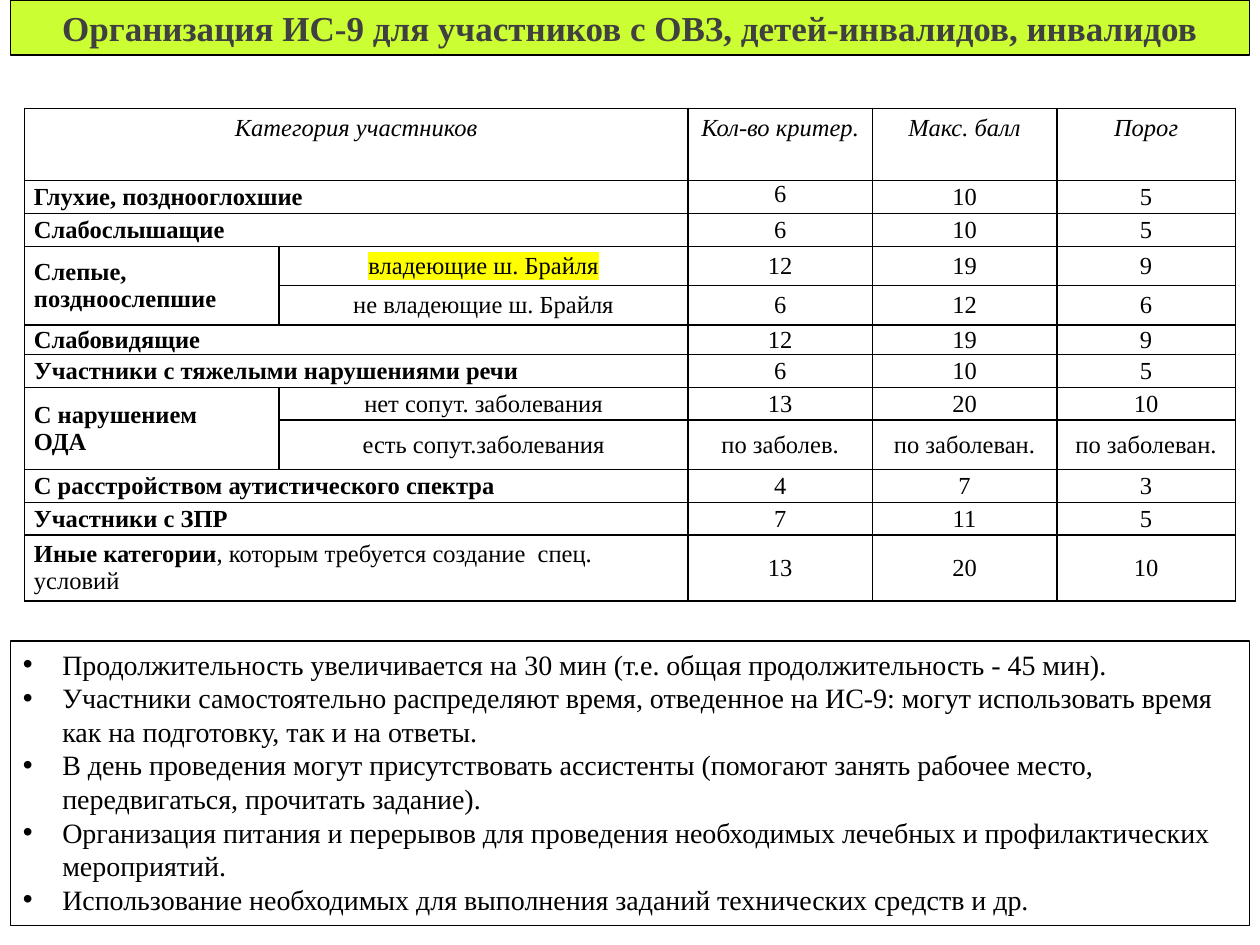
from lxml import etree
from pptx import Presentation
from pptx.dml.color import RGBColor
from pptx.enum import shapes, text
from pptx.oxml import ns
from pptx.util import Pt

FONT = "Times New Roman"
BLACK = RGBColor(0x00, 0x00, 0x00)
WHITE = RGBColor(0xFF, 0xFF, 0xFF)
GRAY = RGBColor(0x40, 0x40, 0x40)
LIME = RGBColor(0xCC, 0xFF, 0x33)
YELLOW = RGBColor(0xFF, 0xFF, 0x00)
CENTER = text.PP_ALIGN.CENTER
LEFT = text.PP_ALIGN.LEFT
MIDDLE = text.MSO_ANCHOR.MIDDLE
TOP = text.MSO_ANCHOR.TOP

# Content
TITLE = "Организация ИС-9 для участников с ОВЗ, детей-инвалидов, инвалидов"
HEADER = ("Категория участников", "", "Кол-во критер.", "Макс. балл", "Порог")
BRAILLE = "владеющие ш. Брайля"
# Category, rest of its wording, subcategory, three values, row height
ROWS = [
    ("Глухие, позднооглохшие", "", "", ("6", "10", "5"), 18.75),
    ("Слабослышащие", "", "", ("6", "10", "5"), 18.75),
    ("Слепые,\nпоздноослепшие", "", BRAILLE, ("12", "19", "9"), 22.5),
    ("", "", "не владеющие ш. Брайля", ("6", "12", "6"), 22.5),
    ("Слабовидящие", "", "", ("12", "19", "9"), 17),
    ("Участники с тяжелыми нарушениями речи", "", "", ("6", "10", "5"), 18.75),
    ("С нарушением\nОДА", "", "нет сопут. заболевания", ("13", "20", "10"), 18.75),
    ("", "", "есть сопут.заболевания",
     ("по заболев.", "по заболеван.", "по заболеван."), 28.25),
    ("С расстройством аутистического спектра", "", "", ("4", "7", "3"), 18.75),
    ("Участники с ЗПР", "", "", ("7", "11", "5"), 18.75),
    ("Иные категории", ", которым требуется создание  спец. условий", "",
     ("13", "20", "10"), 37.5),
]
NOTES = [
    "Продолжительность увеличивается на 30 мин (т.е. общая продолжительность - 45 мин).",
    "Участники самостоятельно распределяют время, отведенное на ИС-9: могут "
    "использовать время как на подготовку, так и на ответы.",
    "В день проведения могут присутствовать ассистенты (помогают занять рабочее "
    "место, передвигаться, прочитать задание).",
    "Организация питания и перерывов для проведения необходимых лечебных и "
    "профилактических мероприятий.",
    "Использование необходимых для выполнения заданий технических средств и др.",
]

# Layout, in points
PANEL_LEFT, PANEL_WIDTH = 6, 708
COLUMN_WIDTHS = (145.5, 233.75, 105.25, 105.5, 102)
HEADER_HEIGHT = 41.25


def add_run(paragraph, content, size=14, color=BLACK, bold=False, italic=False,
            highlight=None):
    run = paragraph.add_run()
    run.text = content
    font = run.font
    font.name, font.size, font.bold, font.italic = FONT, Pt(size), bold, italic
    font.color.rgb = color
    if highlight is not None:
        mark = etree.Element(ns.qn("a:highlight"))
        etree.SubElement(mark, ns.qn("a:srgbClr"), val=str(highlight))
        run._r.rPr.find(ns.qn("a:latin")).addprevious(mark)


def write(frame, content, align=LEFT, bullet=False, **style):
    """Fill a text frame, one paragraph for each line of content."""
    for index, line in enumerate(content.split("\n")):
        paragraph = frame.paragraphs[0] if index == 0 else frame.add_paragraph()
        paragraph.alignment = align
        if bullet:
            properties = paragraph._p.get_or_add_pPr()
            properties.set("marL", str(Pt(22.5)))
            properties.set("indent", str(-Pt(22.5)))
            etree.SubElement(properties, ns.qn("a:buFont"), typeface="Arial")
            etree.SubElement(properties, ns.qn("a:buChar"), char="•")
        add_run(paragraph, line, **style)


def paint(shape, color):
    shape.fill.solid()
    shape.fill.fore_color.rgb = color
    shape.line.color.rgb = BLACK
    shape.line.width = Pt(0.75)


def place(shape, top, height):
    shape.left, shape.top = Pt(PANEL_LEFT), Pt(top)
    shape.width, shape.height = Pt(PANEL_WIDTH), Pt(height)


def format_cell(cell, margin_x, margin_y, anchor):
    cell.margin_left = cell.margin_right = Pt(margin_x)
    cell.margin_top = cell.margin_bottom = Pt(margin_y)
    cell.vertical_anchor = anchor
    cell.fill.solid()
    cell.fill.fore_color.rgb = WHITE
    properties = cell._tc.get_or_add_tcPr()
    for index, side in enumerate(("a:lnL", "a:lnR", "a:lnT", "a:lnB")):
        border = etree.Element(ns.qn(side), w=str(Pt(1)))
        fill = etree.SubElement(border, ns.qn("a:solidFill"))
        etree.SubElement(fill, ns.qn("a:srgbClr"), val=str(BLACK))
        properties.insert(index, border)


def add_categories(slide):
    heights = [HEADER_HEIGHT] + [row[-1] for row in ROWS]
    frame = slide.shapes.add_table(
        len(heights), len(COLUMN_WIDTHS), Pt(14), Pt(62),
        Pt(sum(COLUMN_WIDTHS)), Pt(sum(heights)))
    table = frame.table
    table.first_row = table.horz_banding = False
    for column, width in zip(table.columns, COLUMN_WIDTHS):
        column.width = Pt(width)
    for row, height in zip(table.rows, heights):
        row.height = Pt(height)

    # Header
    for column, label in enumerate(HEADER):
        cell = table.cell(0, column)
        format_cell(cell, 7.2, 3.6, TOP)
        if label:
            write(cell.text_frame, label, align=CENTER, italic=True)
    table.cell(0, 0).merge(table.cell(0, 1))

    # Body
    for index, (category, rest, subcategory, values, _) in enumerate(ROWS, 1):
        cells = [table.cell(index, column) for column in range(len(COLUMN_WIDTHS))]
        for cell in cells:
            format_cell(cell, 5.4, 0, MIDDLE)
        if category:
            write(cells[0].text_frame, category, bold=True)
        if rest:
            add_run(cells[0].text_frame.paragraphs[0], rest)
        for cell, label in zip(cells[1:], (subcategory, *values)):
            if label:
                write(cell.text_frame, label, align=CENTER,
                      highlight=YELLOW if label == BRAILLE else None)
        if not subcategory:
            cells[0].merge(cells[1])
        elif not category:
            table.cell(index - 1, 0).merge(cells[0])
    # The first count sits at the top of its cell
    table.cell(1, 2).vertical_anchor = TOP


def main():
    presentation = Presentation()
    presentation.slide_width, presentation.slide_height = Pt(720), Pt(540)
    slide = presentation.slides.add_slide(presentation.slide_layouts[5])

    # Title
    title = slide.shapes.title
    place(title, 0, 31.5)
    paint(title, LIME)
    title.text_frame.auto_size = text.MSO_AUTO_SIZE.NONE
    title.text_frame.vertical_anchor = MIDDLE
    write(title.text_frame, TITLE, align=CENTER, size=20, color=GRAY, bold=True)

    # Table of categories
    add_categories(slide)

    # Notes on the procedure
    notes = slide.shapes.add_shape(shapes.MSO_SHAPE.RECTANGLE, 0, 0, 0, 0)
    place(notes, 366.25, 162.5)
    paint(notes, WHITE)
    notes.shadow.inherit = False
    notes.text_frame.word_wrap = True
    notes.text_frame.auto_size = text.MSO_AUTO_SIZE.SHAPE_TO_FIT_TEXT
    notes.text_frame.vertical_anchor = TOP
    write(notes.text_frame, "\n".join(NOTES), bullet=True, size=16)

    presentation.save("out.pptx")


if __name__ == "__main__":
    main()
